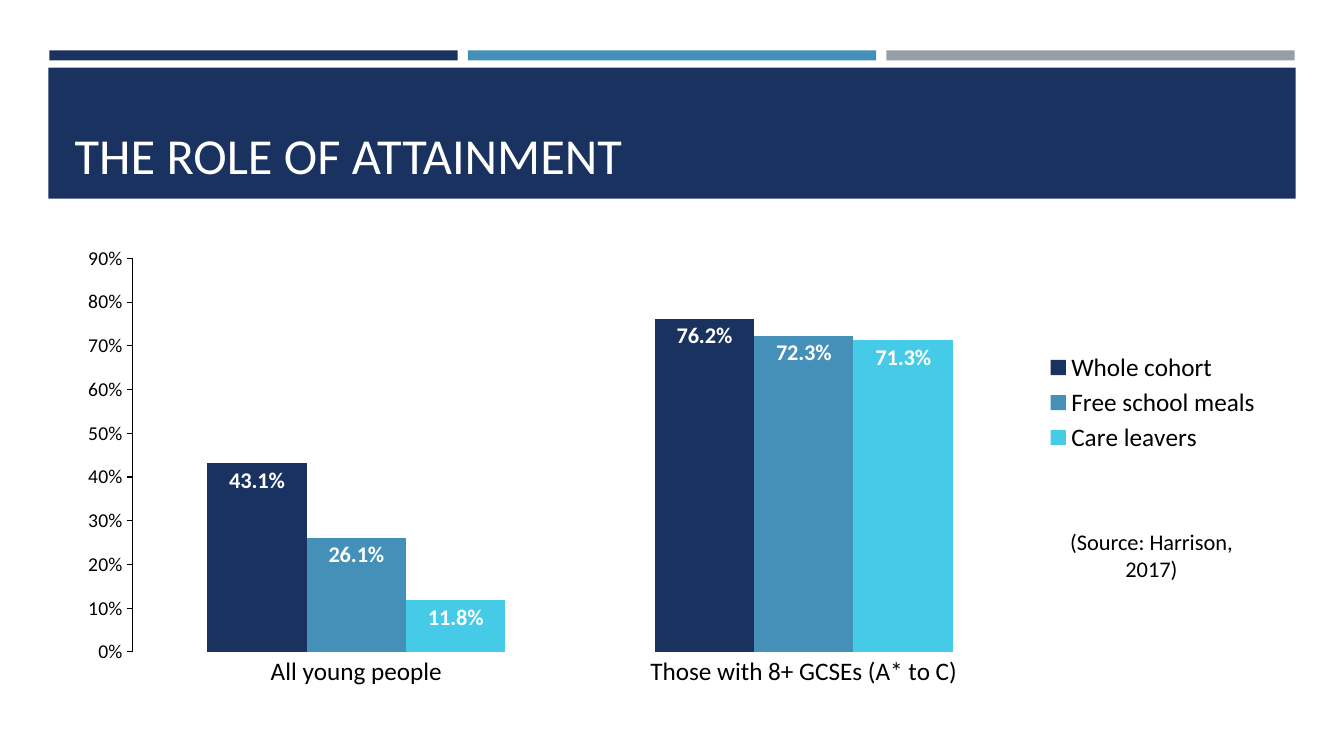
import pptx
import pptx.chart.data
import pptx.dml.color
import pptx.enum.chart
import pptx.enum.shapes
import pptx.enum.text
import pptx.oxml
import pptx.oxml.ns
import pptx.util

Inches = pptx.util.Inches
Pt = pptx.util.Pt
HUES = {"navy": "1A3260", "blue": "4590B8", "grey": "969FA7",
        "cyan": "45CBE8", "white": "FFFFFF", "black": "000000"}
CATS = ["All young people", "Those with 8+ GCSEs (A* to C)"]
GROUPS = [("Whole cohort", (0.431, 0.762), "navy"),
          ("Free school meals", (0.261, 0.723), "blue"),
          ("Care leavers", (0.118, 0.713), "cyan")]


def rgb(hue):
    return pptx.dml.color.RGBColor.from_string(HUES[hue])


def dress(font, size, hue="black", bold=False):
    font.name = "Calibri"
    font.size = Pt(size)
    font.bold = bold
    font.color.rgb = rgb(hue)


def write(shape, text, size, hue="black", align="LEFT", anchor="TOP"):
    frame = shape.text_frame
    frame.word_wrap = True
    frame.auto_size = pptx.enum.text.MSO_AUTO_SIZE.NONE
    frame.vertical_anchor = getattr(pptx.enum.text.MSO_ANCHOR, anchor)
    frame.text = text
    line = frame.paragraphs[0]
    line.alignment = getattr(pptx.enum.text.PP_ALIGN, align)
    dress(line.runs[0].font, size, hue)


def layout(parent, index, box, inner=False):
    """Fix a chart part at box: x, y, width, height as shares of the chart."""
    for old in parent.xpath("./c:layout"):
        parent.remove(old)
    target = '<c:layoutTarget val="inner"/>' if inner else ""
    modes = '<c:xMode val="edge"/><c:yMode val="edge"/>'
    sizes = "".join(f'<c:{k} val="{v}"/>' for k, v in zip("xywh", box))
    parent.insert(index, pptx.oxml.parse_xml(
        f'<c:layout {pptx.oxml.ns.nsdecls("c")}><c:manualLayout>'
        f"{target}{modes}{sizes}</c:manualLayout></c:layout>"))


class Deck:
    def __init__(self):
        self.show = pptx.Presentation()
        self.show.slide_width = Inches(13.33)
        self.show.slide_height = Inches(7.5)
        self.slide = self.show.slides.add_slide(self.show.slide_layouts[5])

    def bar(self, box, hue):
        kind = pptx.enum.shapes.MSO_SHAPE.RECTANGLE
        shape = self.slide.shapes.add_shape(kind, *map(Inches, box))
        shape.shadow.inherit = False
        shape.fill.solid()
        shape.fill.fore_color.rgb = rgb(hue)
        shape.line.fill.background()

    def title(self, box, text, **style):
        head = self.slide.shapes.title
        head.left, head.top, head.width, head.height = map(Inches, box)
        write(head, text, **style)
        # Bring the title in front of the band
        head.element.getparent().append(head.element)

    def text(self, box, text, **style):
        write(self.slide.shapes.add_textbox(*map(Inches, box)), text, **style)

    def chart(self, box):
        enum = pptx.enum.chart
        data = pptx.chart.data.CategoryChartData(number_format="0.0%")
        data.categories = CATS
        for name, vals, _ in GROUPS:
            data.add_series(name, vals)
        chart = self.slide.shapes.add_chart(
            enum.XL_CHART_TYPE.COLUMN_CLUSTERED, *map(Inches, box), data).chart
        dress(chart.font, 10)
        chart.has_title = False
        self.axes(chart)
        self.key(chart)
        plot = chart.plots[0]
        plot.gap_width = 150
        plot.overlap = 0
        plot.vary_by_categories = False
        for series, (_, _, hue) in zip(plot.series, GROUPS):
            series.format.fill.solid()
            series.format.fill.fore_color.rgb = rgb(hue)
            labels = series.data_labels
            labels.show_value = True
            labels.number_format = "0.0%"
            labels.number_format_is_linked = False
            labels.position = enum.XL_LABEL_POSITION.INSIDE_END
            dress(labels.font, 16, "white", bold=True)
        layout(chart.element.xpath(".//c:plotArea")[0], 0,
               (0.056, 0.045, 0.736, 0.86), inner=True)

    def axes(self, chart):
        tick = pptx.enum.chart.XL_TICK_MARK
        cat, val = chart.category_axis, chart.value_axis
        cat.major_tick_mark = tick.NONE
        cat.format.line.fill.background()
        dress(cat.tick_labels.font, 18)
        val.minimum_scale, val.maximum_scale = 0, 0.9
        val.major_unit = 0.1
        val.has_major_gridlines = False
        val.major_tick_mark = tick.OUTSIDE
        val.format.line.color.rgb = rgb("black")
        val.format.line.width = Pt(0.75)
        val.tick_labels.number_format = "0%"
        val.tick_labels.number_format_is_linked = False
        dress(val.tick_labels.font, 14)

    def key(self, chart):
        chart.has_legend = True
        chart.legend.position = pptx.enum.chart.XL_LEGEND_POSITION.RIGHT
        chart.legend.include_in_layout = False
        dress(chart.legend.font, 18)
        layout(chart.element.xpath(".//c:legend")[0], 1,
               (0.8, 0.24, 0.19, 0.24))


def main():
    deck = Deck()
    for i, hue in enumerate(("navy", "blue", "grey")):
        deck.bar((0.49 + 4.15 * i, 0.5, 4.05, 0.1), hue)
    deck.bar((0.48, 0.67, 12.37, 1.3), "navy")
    deck.title((0.64, 0.77, 12.06, 1.11), "THE ROLE OF ATTAINMENT",
               size=36, hue="white", anchor="BOTTOM")
    deck.chart((0.64, 2.36, 12.06, 4.54))
    deck.text((10.48, 5.19, 1.88, 1.09), "(Source: Harrison, 2017)",
              size=16, align="CENTER")
    deck.show.save("out.pptx")


if __name__ == "__main__":
    main()
